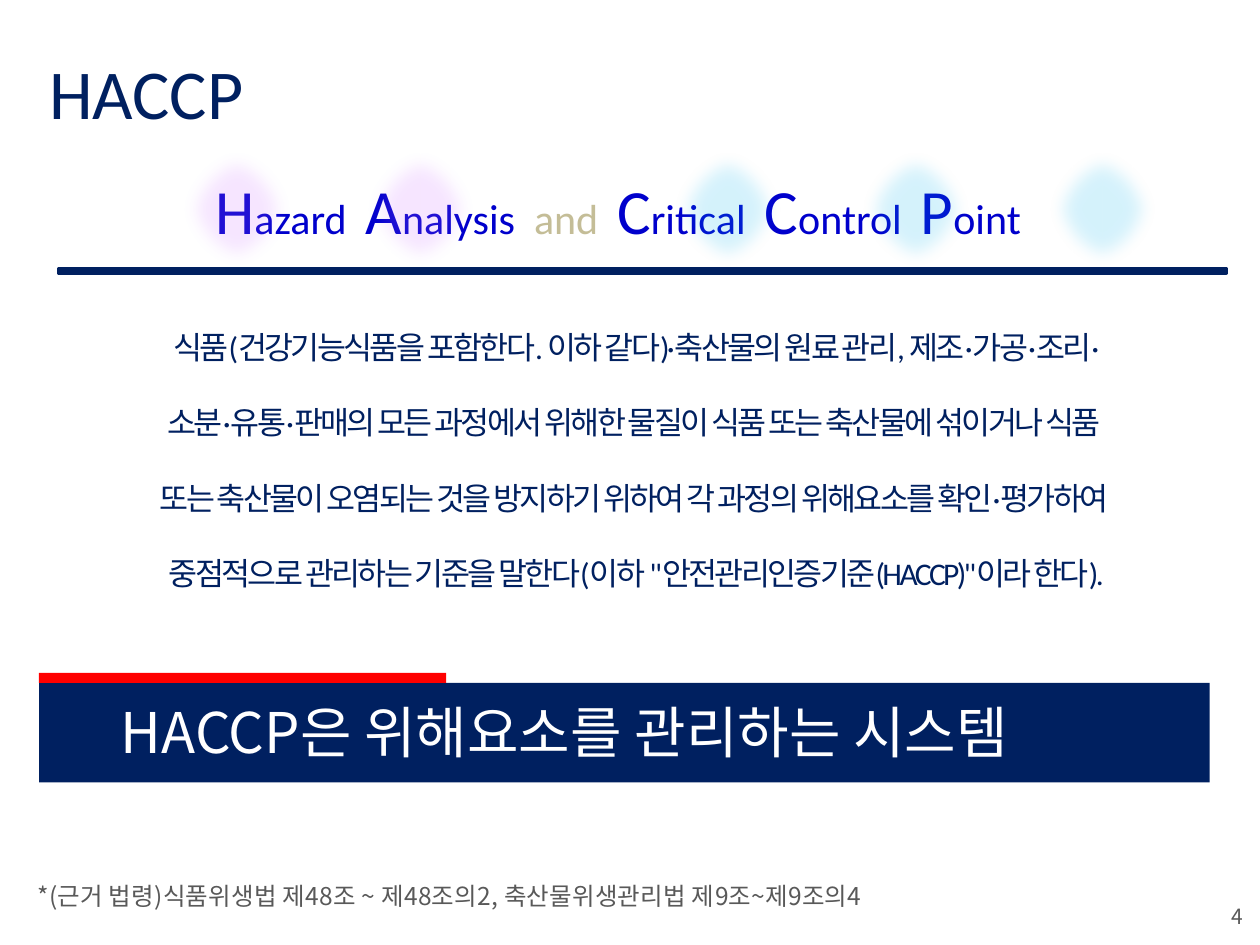
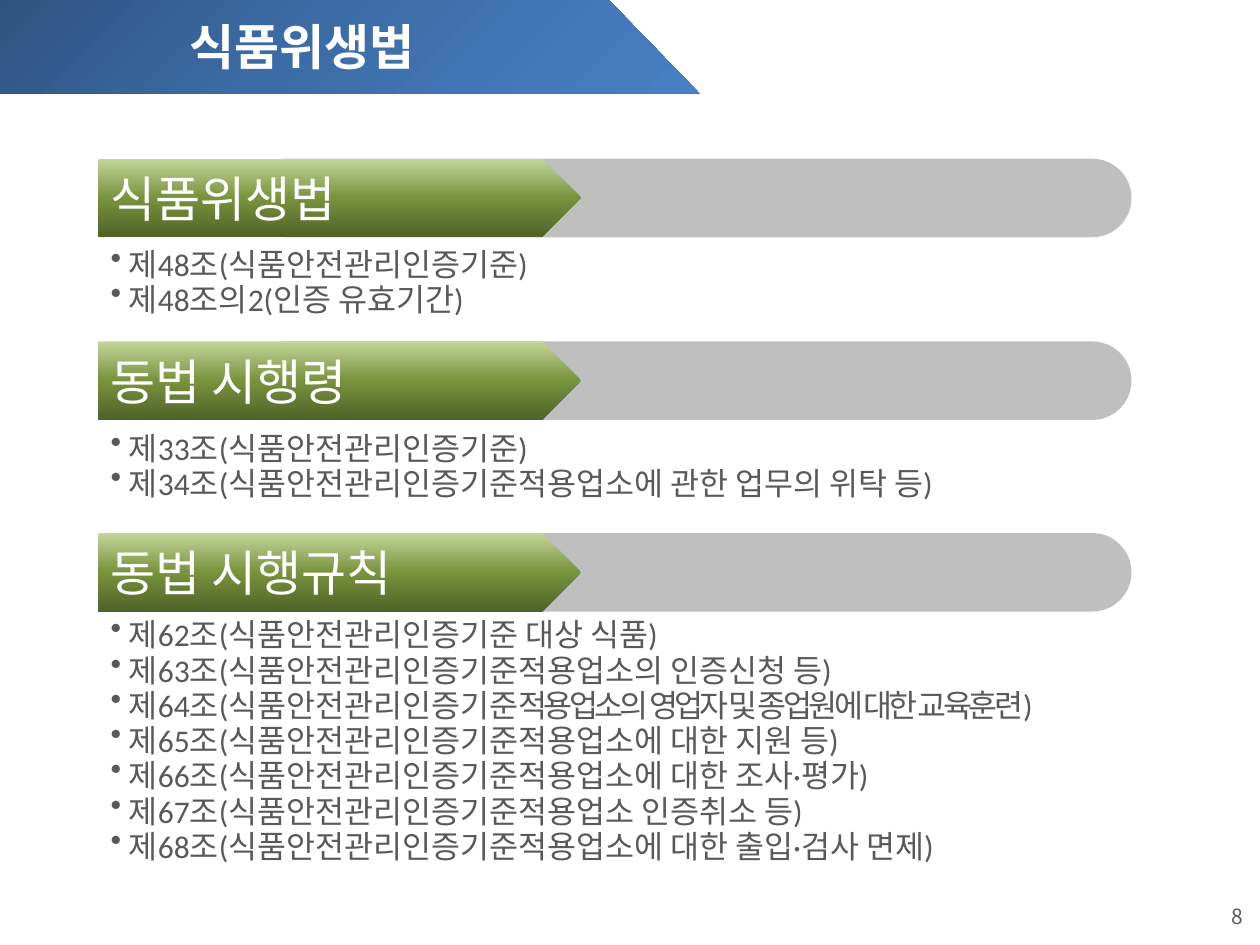
from dataclasses import dataclass

from lxml import etree
from pptx import Presentation
from pptx.dml.color import RGBColor
from pptx.enum.shapes import MSO_SHAPE
from pptx.enum.text import MSO_ANCHOR, MSO_AUTO_SIZE, PP_ALIGN
from pptx.oxml.ns import qn
from pptx.util import Pt

RECT = MSO_SHAPE.RECTANGLE
ROUND = MSO_SHAPE.ROUNDED_RECTANGLE
PLATE = MSO_SHAPE.PENTAGON
SLANT = MSO_SHAPE.PARALLELOGRAM
OVAL = MSO_SHAPE.OVAL
TOP, MIDDLE = MSO_ANCHOR.TOP, MSO_ANCHOR.MIDDLE
LEFT, CENTER, RIGHT = PP_ALIGN.LEFT, PP_ALIGN.CENTER, PP_ALIGN.RIGHT
FIXED = MSO_AUTO_SIZE.NONE


@dataclass(frozen=True)
class Theme:
    latin: str = "Calibri"
    asian: str = "Noto Sans CJK KR"
    navy: str = "002060"
    blue: str = "0000CC"
    sand: str = "C4BD97"
    red: str = "FF0000"
    white: str = "FFFFFF"
    gray: str = "595959"
    track: str = "BFBFBF"
    sky: str = "00B0F0"
    violet: str = "CC66FF"
    green: tuple = ("C3D69B", "77933C", "4F6228")
    ocean: tuple = ("2A4C75", "3C6CA6", "4780C5")
    title: int = 40
    cap: int = 36
    claim: int = 32
    head: int = 28
    word: int = 24
    body: int = 18
    note: int = 14
    page: int = 12


T = Theme()

LAW_TEXT = [
    "식품(건강기능식품을 포함한다. 이하 같다)·축산물의 원료 관리, 제조·가공·조리·",
    "소분·유통·판매의 모든 과정에서 위해한 물질이 식품 또는 축산물에 섞이거나 식품 ",
    "또는 축산물이 오염되는 것을 방지하기 위하여 각 과정의 위해요소를 확인·평가하여 ",
    '중점적으로 관리하는 기준을 말한다(이하 "안전관리인증기준(HACCP)"이라 한다).',
]
WORDS = [("H", "azard"), ("A", "nalysis"), ("", "and"),
         ("C", "ritical"), ("C", "ontrol"), ("P", "oint")]
GLOWS = [(382.3, T.sky), (489.6, T.sky), (596.2, T.sky),
         (101.5, T.violet), (206.6, T.violet)]
LAWS = [
    ("식품위생법", 90.7, 144, [
        "제48조(식품안전관리인증기준)",
        "제48조의2(인증 유효기간)",
    ]),
    ("동법 시행령", 195.1, 249.1, [
        "제33조(식품안전관리인증기준)",
        "제34조(식품안전관리인증기준적용업소에 관한 업무의 위탁 등)",
    ]),
    ("동법 시행규칙", 304.6, 355.7, [
        "제62조(식품안전관리인증기준 대상 식품)",
        "제63조(식품안전관리인증기준적용업소의 인증신청 등)",
        [("제64조(식품안전관리인증기준", {}),
         ("적용업소의 영업자 및 종업원에 대한 교육훈련", {"gap": -2}),
         (")", {})],
        "제65조(식품안전관리인증기준적용업소에 대한 지원 등)",
        "제66조(식품안전관리인증기준적용업소에 대한 조사·평가)",
        "제67조(식품안전관리인증기준적용업소 인증취소 등)",
        "제68조(식품안전관리인증기준적용업소에 대한 출입·검사 면제)",
    ]),
]


def assign(target, values):
    for name, value in values.items():
        setattr(target, name, value)


def node(parent, tag, **attrs):
    return etree.SubElement(parent, qn(tag), attrs)


def add_run(para, text, size, color, face=T.latin, bold=False, gap=0):
    run = para.add_run()
    run.text = text
    assign(run.font, {"size": Pt(size), "name": face, "bold": bold})
    run.font.color.rgb = RGBColor.from_string(color)
    props = run.font._element
    node(props, "a:ea", typeface=T.asian)
    if gap:
        props.set("spc", str(round(gap * 100)))


def write(shape, lines, style, align=LEFT, space=1.0, anchor=TOP,
          before=False, bullet=False):
    frame = shape.text_frame
    assign(frame, {
        "word_wrap": True, "auto_size": FIXED, "vertical_anchor": anchor,
        "margin_left": Pt(7.2), "margin_right": Pt(7.2),
        "margin_top": Pt(3.6), "margin_bottom": Pt(3.6),
    })
    for index, line in enumerate(lines):
        para = frame.add_paragraph() if index else frame.paragraphs[0]
        assign(para, {"alignment": align, "line_spacing": space})
        props = para._p.get_or_add_pPr()
        if before:
            node(node(props, "a:spcBef"), "a:spcPct", val="40000")
        if bullet:
            node(props, "a:buChar", char="•")
        runs = [(line, {})] if isinstance(line, str) else line
        for place, (text, extra) in enumerate(runs):
            lead = " " if bullet and place == 0 else ""
            add_run(para, lead + text, **{**style, **extra})


def place(shape, box):
    assign(shape, dict(zip(("left", "top", "width", "height"), map(Pt, box))))


def add_text(slide, box, lines, style, **layout):
    shape = slide.shapes.add_textbox(*map(Pt, box))
    write(shape, lines, style, **layout)
    return shape


def set_title(slide, box, text, style, **layout):
    title = slide.shapes.title
    place(title, box)
    write(title, [text], style, **layout)
    return title


def add_form(slide, kind, box, color):
    shape = slide.shapes.add_shape(kind, *map(Pt, box))
    shape.shadow.inherit = False
    shape.line.fill.background()
    shape.fill.solid()
    shape.fill.fore_color.rgb = RGBColor.from_string(color)
    return shape


def add_blend(slide, kind, box, colors, angle):
    shape = add_form(slide, kind, box, colors[0])
    shape.fill.gradient()
    shape.fill.gradient_angle = 360 - angle
    stops = next(shape._element.iter(qn("a:gsLst")))
    for stop in list(stops):
        stops.remove(stop)
    for index, color in enumerate(colors):
        node(node(stops, "a:gs", pos=str(index * 50000)),
             "a:srgbClr", val=color)
    return shape


def add_glow(slide, left, color):
    shape = add_form(slide, OVAL, (left, 82.8, 67.7, 73.4), color)
    props = shape._element.spPr
    node(next(props.iter(qn("a:srgbClr"))), "a:alpha", val="17000")
    node(props.find(qn("a:effectLst")), "a:softEdge", rad=str(Pt(10)))


def add_page(slide, number):
    add_text(slide, (549.4, 508.3, 167.8, 28.8), [number],
             {"size": T.page, "color": T.gray, "face": T.asian},
             align=RIGHT, space=1.1, anchor=MIDDLE)


def add_name(slide):
    runs = []
    for index, (cap, rest) in enumerate(WORDS):
        color = T.blue if cap else T.sand
        if cap:
            runs.append((cap, {"size": T.cap, "color": color}))
        runs.append((rest, {"color": color}))
        if index < len(WORDS) - 1:
            runs.append((" ", {"gap": 5.4}))
    add_text(slide, (115.9, 94.3, 541.4, 51.1), [runs],
             {"size": T.word, "color": T.blue})


def add_law(slide, name, top, below, items):
    track = add_form(slide, ROUND, (140.4, top, 506.2, 44.9), T.track)
    track.adjustments[0] = 0.5
    plate = add_blend(slide, PLATE, (56.2, top, 275.8, 44.9), T.green, 90)
    write(plate, [name], {"size": T.head, "color": T.white}, anchor=MIDDLE)
    add_text(slide, (56.2, below, 587.5, 21.5 * len(items)), items,
             {"size": T.body, "color": T.gray},
             space=0.6, before=True, bullet=True)


def build_haccp(slide):
    rule = add_form(slide, RECT, (33.8, 153.4, 666.7, 2.9), T.navy)
    rule.line.color.rgb = RGBColor.from_string(T.navy)
    rule.line.width = Pt(2)
    add_text(slide, (34.6, 162, 658.1, 174.2), LAW_TEXT,
             {"size": T.body, "color": T.navy, "gap": -1.5},
             align=CENTER, space=2.0)
    set_title(slide, (20.9, 24.5, 139, 55.4), "HACCP",
              {"size": T.title, "color": T.navy})
    add_form(slide, RECT, (22.3, 390.2, 668.9, 56.9), T.navy)
    add_text(slide, (61.9, 395.3, 591.8, 46.1),
             ["HACCP은 위해요소를 관리하는 시스템"],
             {"size": T.claim, "color": T.white, "face": T.asian})
    add_form(slide, RECT, (22.3, 384.5, 232.6, 5.8), T.red)
    add_text(slide, (14.4, 496.8, 578.2, 30.2),
             ["*(근거 법령)식품위생법 제48조 ~ 제48조의2, 축산물위생관리법 제9조~제9조의4"],
             {"size": T.note, "color": T.gray, "face": T.asian, "gap": 0.1},
             anchor=MIDDLE, before=True)
    add_name(slide)
    for left, color in GLOWS:
        add_glow(slide, left, color)
    add_page(slide, "4")


def build_laws(slide):
    for law in LAWS:
        add_law(slide, *law)
    box = (-54, -1.4, 453.6, 54.7)
    band = add_blend(slide, SLANT, box, T.ocean, 135)
    band.adjustments[0] = 0.97
    band._element.spPr.xfrm.set("flipH", "1")
    title = set_title(slide, box, "식품위생법",
                      {"size": T.head, "color": T.white,
                       "face": T.asian, "bold": True},
                      align=CENTER, anchor=MIDDLE)
    band._element.addnext(title._element)
    add_page(slide, "8")


def main():
    deck = Presentation()
    assign(deck, {"slide_width": Pt(720), "slide_height": Pt(540)})
    plain = deck.slide_layouts.get_by_name("Title Only")
    for build in (build_haccp, build_laws):
        build(deck.slides.add_slide(plain))
    deck.save("out.pptx")


if __name__ == "__main__":
    main()
